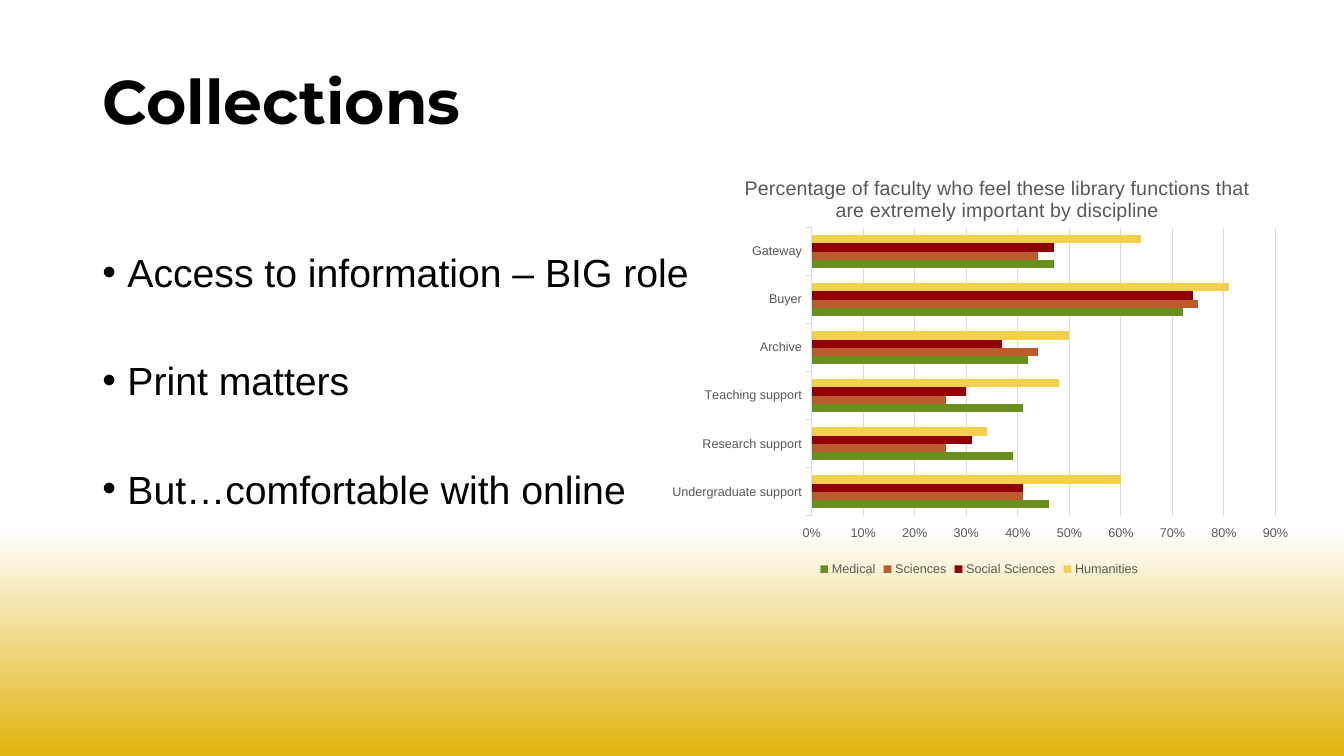
from copy import deepcopy
from dataclasses import dataclass

from lxml.etree import SubElement
from pptx import Presentation
from pptx.chart.data import CategoryChartData as ChartData
from pptx.dml.color import RGBColor
from pptx.enum.chart import XL_CHART_TYPE as Kind
from pptx.enum.chart import XL_LEGEND_POSITION as Place
from pptx.enum.chart import XL_TICK_LABEL_POSITION as Side
from pptx.enum.chart import XL_TICK_MARK as Tick
from pptx.enum.text import MSO_ANCHOR as Anchor
from pptx.oxml import parse_xml
from pptx.oxml.ns import nsdecls, qn
from pptx.util import Pt

BLACK, GREY, PALE = "000000", "595959", "D9D9D9"
ROLES = ["Gateway", "Buyer", "Archive", "Teaching support",
         "Research support", "Undergraduate support"]
STOPS = [(0.31, "FFFFFF"), (0.7, "FEFFFF"), (1, "E1B30E")]


@dataclass
class Field:
    name: str
    color: str
    shares: list[float]


@dataclass
class Box:
    left: float
    top: float
    width: float
    height: float

    def points(self) -> list[Pt]:
        return [Pt(n) for n in (self.left, self.top, self.width, self.height)]


FIELDS = [
    Field("Humanities", "F4CF4B", [0.64, 0.81, 0.5, 0.48, 0.34, 0.6]),
    Field("Social Sciences", "900000", [0.47, 0.74, 0.37, 0.3, 0.31, 0.41]),
    Field("Sciences", "BD5B2B", [0.44, 0.75, 0.44, 0.26, 0.26, 0.41]),
    Field("Medical", "69901D", [0.47, 0.72, 0.42, 0.41, 0.39, 0.46]),
]


def rgb(code: str) -> RGBColor:
    return RGBColor.from_string(code)


def style(font, size: float, color: str, face: str = "Arial", bold: bool = False) -> None:
    font.size, font.name, font.bold = Pt(size), face, bold
    font.color.rgb = rgb(color)


def paint(slide) -> None:
    """Fill the background with the vertical gradient."""
    fill = slide.background.fill
    fill.gradient()
    fill.gradient_angle = 270
    stops = slide.background._cSld.find(".//" + qn("a:gsLst"))
    stops.append(deepcopy(stops[-1]))
    for stop, (place, color) in zip(fill.gradient_stops, STOPS):
        stop.color.rgb = rgb(color)
        stop.position = place


def write(slide, box: Box, text: str, *, size: float, face: str = "Arial",
          bold: bool = False, lead: float = 1, gap: float = 0,
          bullet: bool = False, anchor=Anchor.TOP) -> None:
    frame = slide.shapes.add_textbox(*box.points()).text_frame
    frame.word_wrap = True
    frame.vertical_anchor = anchor
    frame.text = text
    for i, para in enumerate(frame.paragraphs):
        para.line_spacing = lead
        para.space_before = Pt(gap if i else 0)
        if bullet:
            props = para._p.get_or_add_pPr()
            props.set("marL", str(Pt(18)))
            props.set("indent", str(-Pt(18)))
            SubElement(props, qn("a:buFont")).set("typeface", "Arial")
            SubElement(props, qn("a:buChar")).set("char", "•")
        for run in para.runs:
            style(run.font, size, BLACK, face, bold)


def layout(x: float, y: float, size: tuple[float, float] | None = None):
    """Build a manual layout from fractions of the chart frame."""
    tags = [("xMode", "edge"), ("yMode", "edge"), ("x", x), ("y", y)]
    if size:
        tags.insert(0, ("layoutTarget", "inner"))
        tags += zip("wh", size)
    inner = "".join(f'<c:{tag} val="{val}"/>' for tag, val in tags)
    return parse_xml(f'<c:layout {nsdecls("c")}><c:manualLayout>{inner}'
                     "</c:manualLayout></c:layout>")


def place(parent, item, before: str) -> None:
    """Put a layout in front of the named child, replacing any old one."""
    for old in parent.findall(qn("c:layout")):
        parent.remove(old)
    parent.find(qn(before)).addprevious(item)


def plot(slide, box: Box, title: str) -> None:
    data = ChartData(number_format="0%")
    data.categories = ROLES
    for field in FIELDS:
        data.add_series(field.name, field.shares)
    chart = slide.shapes.add_chart(Kind.BAR_CLUSTERED, *box.points(), data).chart
    style(chart.font, 10, BLACK)

    chart.has_title = True
    head = chart.chart_title
    head.text_frame.text = title
    style(head.text_frame.paragraphs[0].runs[0].font, 14, GREY)
    head.include_in_layout = False
    place(head._element, layout(0.13, 0.05), "c:overlay")

    chart.has_legend = True
    chart.legend.position = Place.BOTTOM
    chart.legend.include_in_layout = False
    style(chart.legend.font, 9, GREY)

    bars = chart.plots[0]
    bars.gap_width, bars.overlap = 182, 0
    bars.vary_by_categories = False
    for series, field in zip(bars.series, FIELDS):
        series.format.fill.solid()
        series.format.fill.fore_color.rgb = rgb(field.color)

    roles, shares = chart.category_axis, chart.value_axis
    for axis in (roles, shares):
        style(axis.tick_labels.font, 9, GREY)
        axis.major_tick_mark, axis.minor_tick_mark = Tick.OUTSIDE, Tick.NONE
    roles.reverse_order = True
    shares.tick_label_position = Side.HIGH
    shares.minimum_scale, shares.maximum_scale, shares.major_unit = 0, 0.9, 0.1
    shares.tick_labels.number_format = "0%"
    shares.tick_labels.number_format_is_linked = False
    shares.format.line.fill.background()
    for line in (roles.format.line, shares.major_gridlines.format.line):
        line.color.rgb = rgb(PALE)
        line.width = Pt(0.75)

    area = chart._chartSpace.find(".//" + qn("c:plotArea"))
    place(area, layout(0.24, 0.18, (0.72, 0.67)), "c:barChart")


def main() -> None:
    deck = Presentation()
    deck.slide_width, deck.slide_height = Pt(960), Pt(540)
    slide = deck.slides.add_slide(deck.slide_layouts[6])
    paint(slide)
    write(slide, Box(66, 42, 828, 65.5), "Collections", size=44,
          face="Montserrat", bold=True, lead=0.9, anchor=Anchor.MIDDLE)
    write(slide, Box(66, 140.4, 828, 292.3),
          "Access to information – BIG role\nPrint matters\n"
          "But…comfortable with online",
          size=28, lead=2, gap=10, bullet=True)
    plot(slide, Box(469.5, 107.3, 460, 307.4),
         "Percentage of faculty who feel these library functions that "
         "are extremely important by discipline")
    deck.save("out.pptx")


if __name__ == "__main__":
    main()
